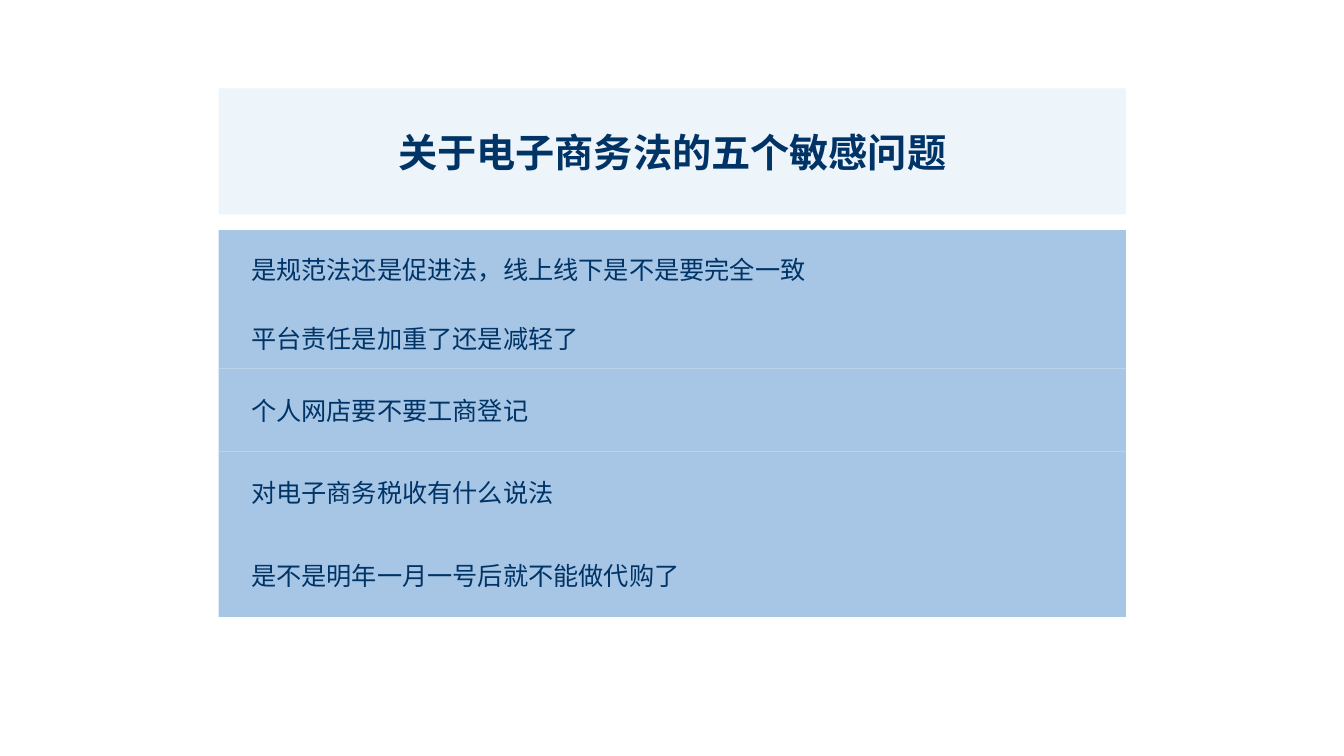
from lxml.etree import SubElement
from pptx import Presentation
from pptx.dml.color import RGBColor
from pptx.enum.shapes import MSO_SHAPE as Shape
from pptx.enum.text import MSO_ANCHOR as Anchor, PP_ALIGN as Align
from pptx.oxml.ns import qn
from pptx.util import Pt

NAVY = RGBColor(0x00, 0x33, 0x66)
PALE_BLUE = RGBColor(0xED, 0xF4, 0xFA)
MID_BLUE = RGBColor(0xA7, 0xC6, 0xE5)
FONT = "Noto Sans CJK SC"

LEFT, WIDTH = 156.2, 648
TITLE_TOP, TITLE_HEIGHT = 63.2, 90
QUESTIONS_TOP = 164.3
QUESTION_INDENT = 23.2

# Each question with the height of its bar
QUESTIONS = [
    ("是规范法还是促进法，线上线下是不是要完全一致", 56.6),
    ("平台责任是加重了还是减轻了", 42.4),
    ("个人网店要不要工商登记", 59.1),
    ("对电子商务税收有什么说法", 59.1),
    ("是不是明年一月一号后就不能做代购了", 59.1),
]


def write_text(shape, text, size=18, bold=False, align=Align.LEFT, indent=7.2):
    frame = shape.text_frame
    frame.word_wrap = True
    frame.vertical_anchor = Anchor.MIDDLE
    frame.margin_left = Pt(indent)
    paragraph = frame.paragraphs[0]
    paragraph.alignment = align
    run = paragraph.add_run()
    run.text = text
    font = run.font
    font.name, font.size, font.bold = FONT, Pt(size), bold
    font.color.rgb = NAVY
    # Chinese characters take the East Asian typeface
    SubElement(run._r.get_or_add_rPr(), qn("a:ea"), typeface=FONT)


def add_bar(slide, top, height, color):
    shape = slide.shapes.add_shape(
        Shape.RECTANGLE, Pt(LEFT), Pt(top), Pt(WIDTH), Pt(height))
    shape.shadow.inherit = False
    shape.fill.solid()
    shape.fill.fore_color.rgb = color
    shape.line.fill.background()
    return shape


def main():
    presentation = Presentation()
    presentation.slide_width, presentation.slide_height = Pt(960), Pt(540)
    slide = presentation.slides.add_slide(presentation.slide_layouts[6])

    # Title
    title = add_bar(slide, TITLE_TOP, TITLE_HEIGHT, PALE_BLUE)
    write_text(title, "关于电子商务法的五个敏感问题",
               size=28, bold=True, align=Align.CENTER)

    # Stacked questions
    top = QUESTIONS_TOP
    for question, height in QUESTIONS:
        bar = add_bar(slide, top, height, MID_BLUE)
        write_text(bar, question, indent=QUESTION_INDENT)
        top += height

    presentation.save("out.pptx")


if __name__ == "__main__":
    main()
